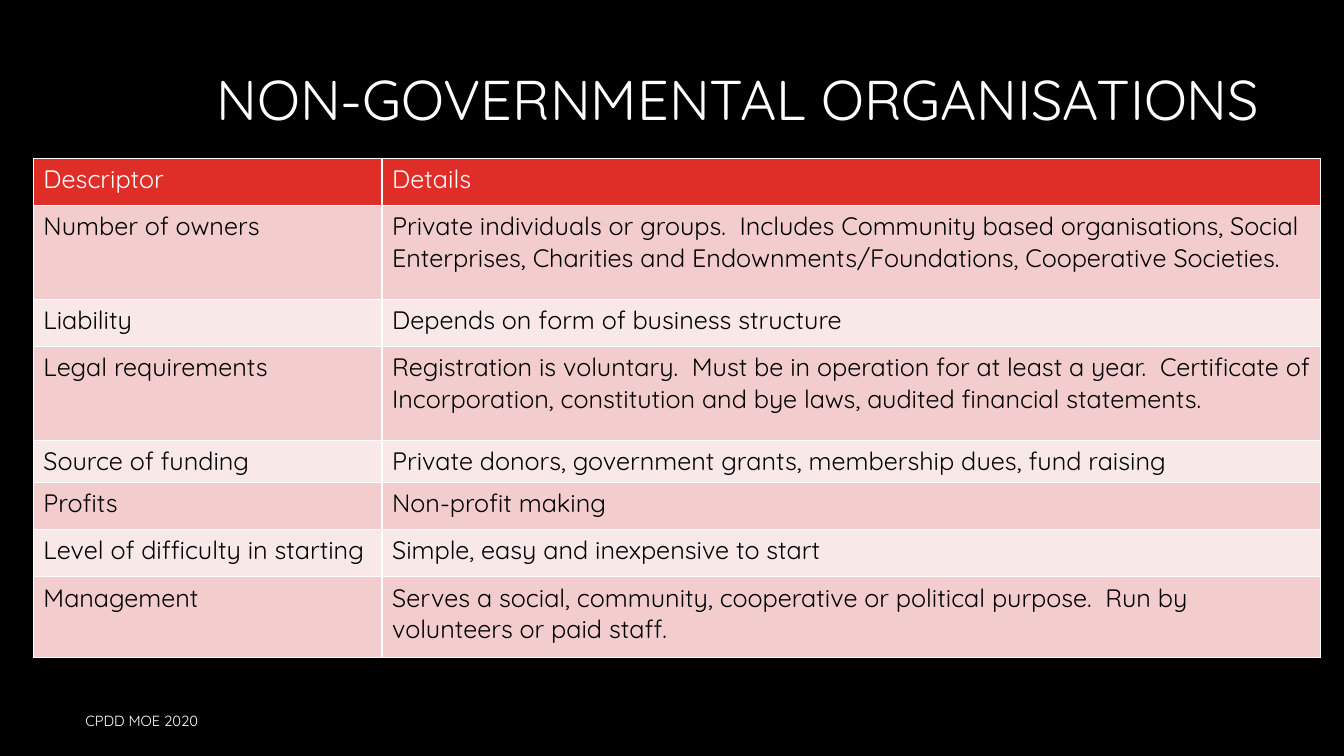
from lxml import etree
from pptx import Presentation
from pptx.dml.color import RGBColor
from pptx.enum.text import MSO_ANCHOR, PP_ALIGN
from pptx.oxml.ns import qn
from pptx.util import Pt

MIDDLE = MSO_ANCHOR.MIDDLE
LEFT, RIGHT = PP_ALIGN.LEFT, PP_ALIGN.RIGHT
BLACK = RGBColor(0x00, 0x00, 0x00)
WHITE = RGBColor(0xFF, 0xFF, 0xFF)
RED = RGBColor(0xDF, 0x2E, 0x28)
ROSE = RGBColor(0xF3, 0xCD, 0xCD)
BLUSH = RGBColor(0xF9, 0xE8, 0xE8)
FONT = "Quicksand"

DESCRIPTORS = [
    ("Descriptor", "Details", 33.8),
    ("Number of owners",
     "Private individuals or groups.  Includes Community based organisations, Social "
     "Enterprises, Charities and Endownments/Foundations, Cooperative Societies.", 67),
    ("Liability", "Depends on form of business structure", 33.8),
    ("Legal requirements",
     "Registration is voluntary.  Must be in operation for at least a year.  Certificate of "
     "Incorporation, constitution and bye laws, audited financial statements.", 67),
    ("Source of funding",
     "Private donors, government grants, membership dues, fund raising", 29.9),
    ("Profits", "Non-profit making", 33.8),
    ("Level of difficulty in starting", "Simple, easy and inexpensive to start", 33.8),
    ("Management",
     "Serves a social, community, cooperative or political purpose.  Run by volunteers "
     "or paid staff.", 57.6),
]


def style(paragraph, size, color):
    """Set the slide font on a paragraph."""
    paragraph.font.name = FONT
    paragraph.font.size = Pt(size)
    paragraph.font.color.rgb = color


def add_line(slide, box, text, size, align):
    """Write one vertically centred white line of text in the box."""
    frame = slide.shapes.add_textbox(*map(Pt, box)).text_frame
    frame.word_wrap = True
    frame.vertical_anchor = MIDDLE
    line = frame.paragraphs[0]
    line.text = text
    line.alignment = align
    line.line_spacing = 0.9 if align == RIGHT else 1.0
    style(line, size, WHITE)


def add_borders(cell, color, width):
    """Draw a solid border on all four sides of a cell."""
    properties = cell._tc.get_or_add_tcPr()
    for side in ("a:lnL", "a:lnR", "a:lnT", "a:lnB"):
        border = etree.SubElement(properties, qn(side), w=str(Pt(width)))
        fill = etree.SubElement(border, qn("a:solidFill"))
        etree.SubElement(fill, qn("a:srgbClr"), val=str(color))


def add_descriptor_table(slide, box, descriptor_width):
    """Place the banded table of descriptors and details in the box."""
    table = slide.shapes.add_table(len(DESCRIPTORS), 2, *map(Pt, box)).table
    table.columns[0].width = Pt(descriptor_width)
    table.columns[1].width = Pt(box[2] - descriptor_width)
    for index, (descriptor, details, height) in enumerate(DESCRIPTORS):
        table.rows[index].height = Pt(height)
        band = RED if index == 0 else ROSE if index % 2 else BLUSH
        for column, text in enumerate((descriptor, details)):
            cell = table.cell(index, column)
            cell.text = text
            add_borders(cell, WHITE, 1)
            cell.fill.solid()
            cell.fill.fore_color.rgb = band
            style(cell.text_frame.paragraphs[0], 18, BLACK if index else WHITE)


def main():
    """Build the slide and save it."""
    presentation = Presentation()
    presentation.slide_width = Pt(960)
    presentation.slide_height = Pt(540)
    slide = presentation.slides.add_slide(presentation.slide_layouts[6])
    slide.background.fill.solid()
    slide.background.fill.fore_color.rgb = BLACK
    add_line(slide, (34.5, 22.3, 872, 101.5), "NON-GOVERNMENTAL ORGANISATIONS", 40, RIGHT)
    table_height = sum(height for _, _, height in DESCRIPTORS)
    add_descriptor_table(slide, (23.8, 113, 919.4, table_height), 249.1)
    add_line(slide, (54, 500.4, 612, 28.8), "CPDD MOE 2020", 10.5, LEFT)
    presentation.save("out.pptx")


if __name__ == "__main__":
    main()
